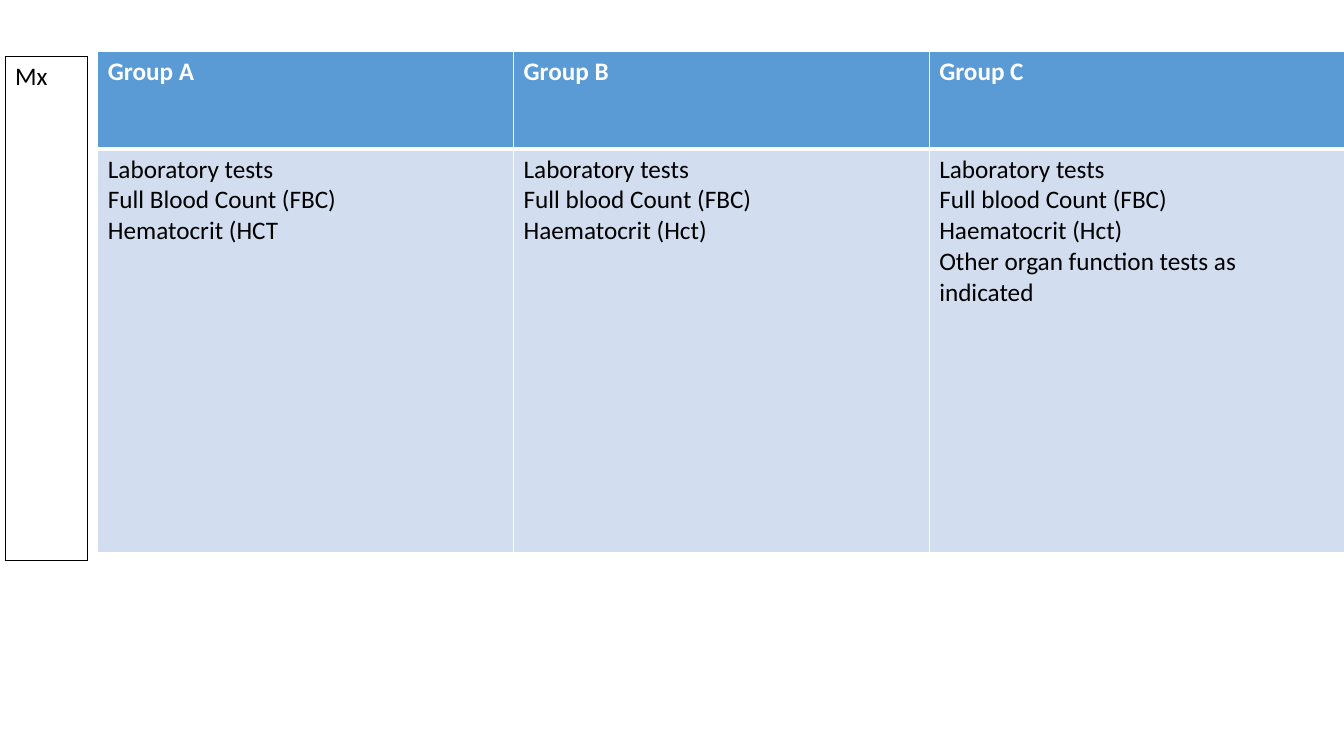
"""Build a slide that compares the laboratory tests of three groups."""
import dataclasses

import lxml.etree
import pptx
import pptx.dml.color
import pptx.oxml.ns
import pptx.util


@dataclasses.dataclass(frozen=True)
class Theme:
    """Hold the colours, font and sizes of the slide."""

    font: str = "Calibri"
    text_size: int = 18
    white: str = "FFFFFF"
    black: str = "000000"
    header: str = "5B9BD5"
    body: str = "D2DEEF"
    thin: int = 1
    thick: int = 3


def write_text(cell, text, *, font, size, color, bold=False):
    """Write each line of text as a formatted paragraph of the cell."""
    cell.text = text
    for para in cell.text_frame.paragraphs:
        for span in para.runs:
            span.font.name = font
            span.font.size = pptx.util.Pt(size)
            span.font.bold = bold
            span.font.color.rgb = pptx.dml.color.RGBColor.from_string(color)


class Page:
    """Place styled elements by percentages of the slide's size."""

    def __init__(self, deck, theme):
        """Add a blank slide to the deck."""
        self.theme = theme
        self.width, self.height = deck.slide_width, deck.slide_height
        self.slide = deck.slides.add_slide(deck.slide_layouts[6])

    def across(self, percent):
        """Turn a percentage of the slide's width into a length."""
        return round(self.width * percent / 100)

    def down(self, percent):
        """Turn a percentage of the slide's height into a length."""
        return round(self.height * percent / 100)

    def table(self, left, top, column_width, row_heights, column_count):
        """Add a table with equal columns and return its grid."""
        frame = self.slide.shapes.add_table(
            len(row_heights), column_count, self.across(left), self.down(top),
            self.across(column_width * column_count), self.down(sum(row_heights)))
        grid = frame.table
        grid.first_row = grid.horz_banding = False
        for column in grid.columns:
            column.width = self.across(column_width)
        for row, height in zip(grid.rows, row_heights):
            row.height = self.down(height)
        return grid

    def borders(self, cell, color, **widths):
        """Draw the four cell borders, thin unless a width is given."""
        properties = cell._tc.get_or_add_tcPr()
        name = pptx.oxml.ns.qn
        for side in "LRTB":
            width = pptx.util.Pt(widths.get(side, self.theme.thin))
            line = lxml.etree.SubElement(properties, name(f"a:ln{side}"), w=str(width))
            fill = lxml.etree.SubElement(line, name("a:solidFill"))
            lxml.etree.SubElement(fill, name("a:srgbClr"), val=color)

    def cell(self, cell, text, *, color, line, fill=None, bold=False, **widths):
        """Style one cell and write its text."""
        self.borders(cell, line, **widths)
        if fill:
            cell.fill.solid()
            cell.fill.fore_color.rgb = pptx.dml.color.RGBColor.from_string(fill)
        else:
            cell.fill.background()
        write_text(cell, text, font=self.theme.font, size=self.theme.text_size,
                   color=color, bold=bold)


def main():
    """Build and save the deck."""
    deck = pptx.Presentation()
    deck.slide_width = pptx.util.Inches(13.33)
    deck.slide_height = pptx.util.Inches(7.5)
    theme = Theme()
    page = Page(deck, theme)

    groups = {
        "Group A": ["Full Blood Count (FBC)", "Hematocrit (HCT"],
        "Group B": ["Full blood Count (FBC)", "Haematocrit (Hct)"],
        "Group C": ["Full blood Count (FBC)", "Haematocrit (Hct)",
                    "Other organ function tests as indicated"],
    }
    tests_grid = page.table(7.28, 6.8, 30.93, [12.93, 53.33], len(groups))
    for column, (group, tests) in enumerate(groups.items()):
        page.cell(tests_grid.cell(0, column), group, color=theme.white,
                  line=theme.white, fill=theme.header, bold=True, B=theme.thick)
        page.cell(tests_grid.cell(1, column), "\n".join(["Laboratory tests", *tests]),
                  color=theme.black, line=theme.white, fill=theme.body, T=theme.thick)

    label_grid = page.table(0.38, 7.47, 6.15, [66.67], 1)
    page.cell(label_grid.cell(0, 0), "Mx", color=theme.black, line=theme.black)
    deck.save("out.pptx")


if __name__ == "__main__":
    main()
